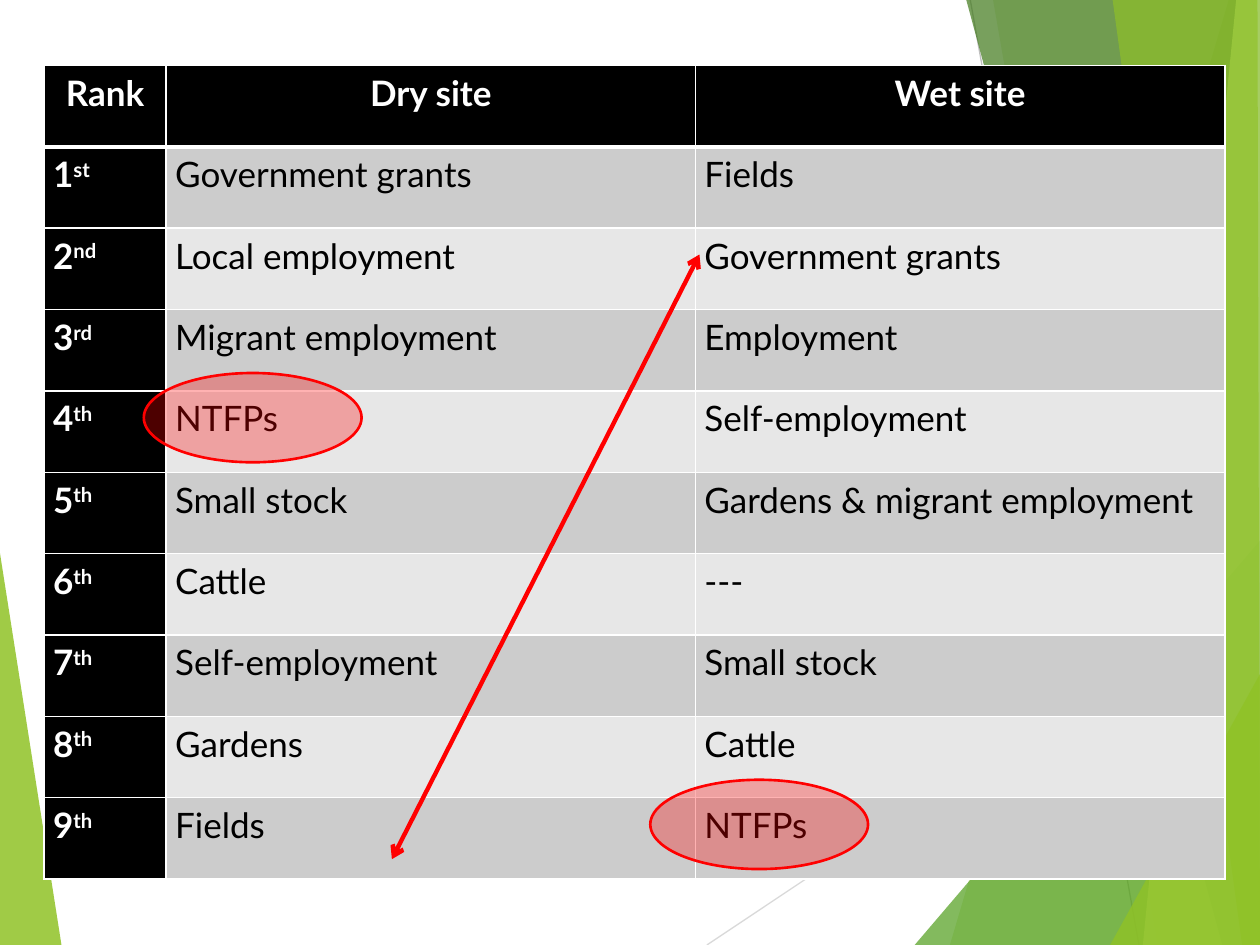
from lxml.etree import SubElement
from pptx import Presentation
from pptx.dml.color import RGBColor
from pptx.enum.shapes import MSO_CONNECTOR as LINE, MSO_SHAPE as SHAPE
from pptx.enum.text import PP_ALIGN as ALIGN
from pptx.oxml import parse_xml
from pptx.oxml.ns import nsdecls, qn
from pptx.util import Cm, Pt

WHITE = RGBColor(0xFF, 0xFF, 0xFF)
BLACK = RGBColor(0, 0, 0)
RED = RGBColor(0xFF, 0, 0)
GREY = RGBColor(0xCC, 0xCC, 0xCC)
PALE_GREY = RGBColor(0xE7, 0xE7, 0xE7)
LIGHT_RULE = RGBColor(0xD9, 0xD9, 0xD9)
DARK_RULE = RGBColor(0xBF, 0xBF, 0xBF)
LIME = RGBColor(0x90, 0xC2, 0x26)
GREEN = RGBColor(0x54, 0xA0, 0x21)
DARK_GREEN = RGBColor(0x3F, 0x78, 0x19)
PALE_LIME = RGBColor(0xC0, 0xE4, 0x74)
FONT = "Lato"
WIDTH, HEIGHT = 25.4, 19.05

HEADINGS = ["Rank", "Dry site", "Wet site"]
RANKING = [
    ("1", "st", "Government grants", "Fields"),
    ("2", "nd", "Local employment", "Government grants"),
    ("3", "rd", "Migrant employment", "Employment"),
    ("4", "th", "NTFPs", "Self-employment"),
    ("5", "th", "Small stock", "Gardens & migrant employment"),
    ("6", "th", "Cattle", "---"),
    ("7", "th", "Self-employment", "Small stock"),
    ("8", "th", "Gardens", "Cattle"),
    ("9", "th", "Fields", "NTFPs"),
]
TABLE_LEFT, TABLE_TOP = 0.89, 1.32
COLUMN_WIDTHS = [2.46, 10.67, 10.67]
ROW_HEIGHT = 1.64

CORNER = (WIDTH, HEIGHT)
RIGHT_EDGE = [CORNER, (WIDTH, 0)]
LEFT_WEDGE = ([(0, 11.15), (1.24, HEIGHT), (0, HEIGHT)], LIME, 85)
RULES = [
    ((14.25, HEIGHT), (WIDTH, 11.61), LIGHT_RULE),
    ((19.56, 0), (22.96, HEIGHT), DARK_RULE),
]
RIGHT_FACETS = [
    ([(24.77, 0), (19.15, HEIGHT), *RIGHT_EDGE], LIME, 30),
    ([(20.02, 0), (23.34, HEIGHT), *RIGHT_EDGE], LIME, 20),
    ([(18.44, HEIGHT), (WIDTH, 10.9), CORNER], GREEN, 72),
    ([(19.48, 0), (24.64, HEIGHT), *RIGHT_EDGE], DARK_GREEN, 70),
    ([(24.92, 0), (23.04, HEIGHT), *RIGHT_EDGE], PALE_LIME, 70),
    ([(22.43, 0), (25.04, HEIGHT), CORNER, (25.35, 0)], LIME, 65),
    ([(22.38, HEIGHT), (WIDTH, 13.59), CORNER], LIME, 80),
]
FIELDS_TO_GRANTS = ((7.9, 17.32), (14.1, 5.13))
NTFP_MARKS = [(2.9, 7.52), (13.11, 15.72)]
MARK_SIZE = (4.39, 1.8)


def fill_translucent(shape, color, opacity):
    shape.shadow.inherit = False
    shape.fill.solid()
    shape.fill.fore_color.rgb = color
    tint = shape.element.spPr.find(qn("a:solidFill"))[0]
    SubElement(tint, qn("a:alpha")).set("val", str(opacity * 1000))


def add_facet(slide, points, color, opacity):
    start, *rest = [(Cm(x), Cm(y)) for x, y in points]
    builder = slide.shapes.build_freeform(*start)
    builder.add_line_segments(rest)
    facet = builder.convert_to_shape()
    fill_translucent(facet, color, opacity)
    facet.line.fill.background()


def add_rule(slide, start, end, color, width):
    ends = [Cm(value) for value in (*start, *end)]
    rule = slide.shapes.add_connector(LINE.STRAIGHT, *ends)
    rule.line.color.rgb = color
    rule.line.width = Pt(width)
    SubElement(rule.element.spPr, qn("a:effectLst"))
    return rule


def add_text(paragraph, text, color, bold, raised=False):
    run = paragraph.add_run()
    run.text = text
    run.font.name = FONT
    run.font.size = Pt(20)
    run.font.bold = bold
    run.font.color.rgb = color
    if raised:
        run.font._element.set("baseline", "30000")


def format_cell(cell, color, top=1, bottom=1):
    cell.margin_left = cell.margin_right = Cm(0.18)
    cell.margin_top = cell.margin_bottom = 0
    cell.fill.solid()
    cell.fill.fore_color.rgb = color
    properties = cell._tc.get_or_add_tcPr()
    borders = [("L", 1), ("R", 1), ("T", top), ("B", bottom)]
    for place, (side, width) in enumerate(borders):
        properties.insert(place, parse_xml(
            f'<a:ln{side} {nsdecls("a")} w="{Pt(width)}"><a:solidFill>'
            f'<a:srgbClr val="{WHITE}"/></a:solidFill></a:ln{side}>'))
    paragraph = cell.text_frame.paragraphs[0]
    paragraph.line_spacing = 1.15
    return paragraph


def add_ranking(slide):
    row_count = len(RANKING) + 1
    table = slide.shapes.add_table(
        row_count, len(HEADINGS), Cm(TABLE_LEFT), Cm(TABLE_TOP),
        Cm(sum(COLUMN_WIDTHS)), Cm(ROW_HEIGHT * row_count)).table
    for column, width in zip(table.columns, COLUMN_WIDTHS):
        column.width = Cm(width)
    for row in table.rows:
        row.height = Cm(ROW_HEIGHT)
    for column, heading in enumerate(HEADINGS):
        paragraph = format_cell(table.cell(0, column), BLACK, bottom=3)
        paragraph.alignment = ALIGN.CENTER
        add_text(paragraph, heading, WHITE, True)
    for row, (number, suffix, *sources) in enumerate(RANKING, 1):
        top = 3 if row == 1 else 1
        rank = format_cell(table.cell(row, 0), BLACK, top)
        add_text(rank, number, WHITE, True)
        add_text(rank, suffix, WHITE, True, raised=True)
        band = GREY if row % 2 else PALE_GREY
        for column, source in enumerate(sources, 1):
            paragraph = format_cell(table.cell(row, column), band, top)
            add_text(paragraph, source, BLACK, False)


def add_marks(slide):
    arrow = add_rule(slide, *FIELDS_TO_GRANTS, RED, 2.5)
    stroke = arrow.line._get_or_add_ln()
    for end in ("a:headEnd", "a:tailEnd"):
        SubElement(stroke, qn(end)).set("type", "arrow")
    for corner in NTFP_MARKS:
        box = [Cm(value) for value in (*corner, *MARK_SIZE)]
        mark = slide.shapes.add_shape(SHAPE.OVAL, *box)
        fill_translucent(mark, RED, 30)
        mark.line.color.rgb = RED
        mark.line.width = Pt(1.5)


def main():
    deck = Presentation()
    deck.slide_width, deck.slide_height = Cm(WIDTH), Cm(HEIGHT)
    slide = deck.slides.add_slide(deck.slide_layouts[6])
    add_facet(slide, *LEFT_WEDGE)
    for start, end, color in RULES:
        add_rule(slide, start, end, color, 0.75)
    for facet in RIGHT_FACETS:
        add_facet(slide, *facet)
    add_ranking(slide)
    add_marks(slide)
    deck.save("out.pptx")


if __name__ == "__main__":
    main()
